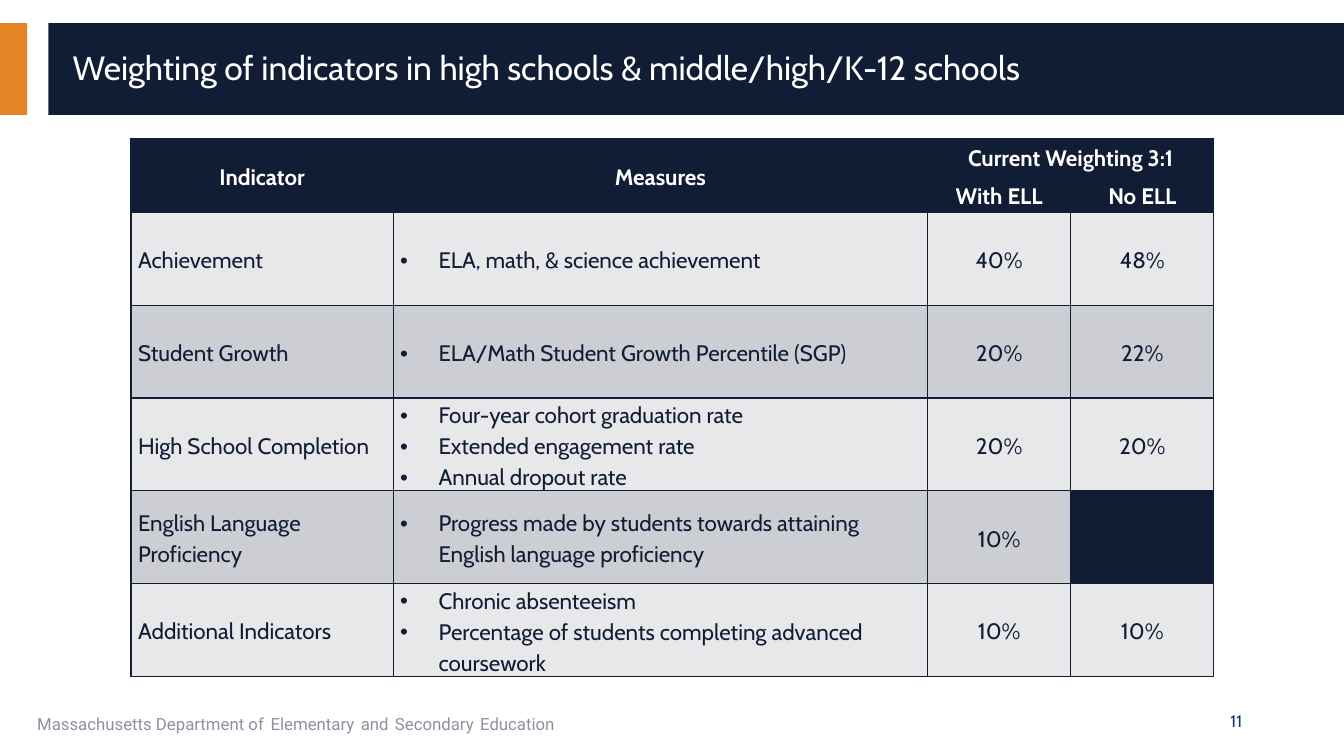
"""Build the slide on indicator weighting in high schools."""
from lxml import etree
from pptx import Presentation
from pptx import util as u
from pptx.dml.color import RGBColor
from pptx.enum import shapes, text
from pptx.oxml.ns import qn

COLOURS = {"navy": "101D35", "orange": "E38526", "white": "FFFFFF", "blue": "203B6A",
           "grey": "8D92A1", "light": "E8E8EB", "dark": "CDCED4"}
TITLE = "Weighting of indicators in high schools & middle/high/K-12 schools"
FOOTER = ["Massachusetts Department of", "Elementary", "and", "Secondary", "Education"]
PAGE_NUMBER = "11"
BARS = [(0, 0.27, "orange"), (0.48, 12.85, "navy")]
HEADERS = [["Indicator", "Measures", "Current Weighting 3:1", ""],
           ["", "", "With ELL", "No ELL"]]
INDICATORS = [
    (["Achievement"], ["ELA, math, & science achievement"], "40%", "48%"),
    (["Student Growth"], ["ELA/Math Student Growth Percentile (SGP)"], "20%", "22%"),
    (["High School Completion"],
     ["Four-year cohort graduation rate", "Extended engagement rate", "Annual dropout rate"],
     "20%", "20%"),
    (["English Language", "Proficiency"],
     ["Progress made by students towards attaining English language proficiency"], "10%", ""),
    (["Additional Indicators"],
     ["Chronic absenteeism", "Percentage of students completing advanced coursework"],
     "10%", "10%"),
]
COLUMN_WIDTHS = [2.6, 5.3, 1.42, 1.42]
ROW_HEIGHTS = [0.37] * 2 + [0.92] * len(INDICATORS)
MERGES = [(0, 0, 1, 0), (0, 1, 1, 1), (0, 2, 0, 3)]
LEFT, CENTRE, RIGHT = text.PP_ALIGN.LEFT, text.PP_ALIGN.CENTER, text.PP_ALIGN.RIGHT


def colour(name):
    return RGBColor.from_string(COLOURS[name])


def add_span(para, words, size=16, font="Cabin", ink="navy", bold=False):
    span = para.add_run()
    span.text = words
    span.font.size, span.font.name, span.font.bold = u.Pt(size), font, bold
    span.font.color.rgb = colour(ink)


def write(frame, lines, align=LEFT, spacing=1.0, bullet=False, **style):
    for index, line in enumerate(lines):
        para = frame.add_paragraph() if index else frame.paragraphs[0]
        para.alignment, para.line_spacing = align, spacing
        if bullet:
            props = para._p.get_or_add_pPr()
            props.set("marL", str(u.Inches(0.38)))
            props.set("indent", str(-u.Inches(0.38)))
            etree.SubElement(props, qn("a:buFont")).set("typeface", "Arial")
            etree.SubElement(props, qn("a:buChar")).set("char", "•")
        add_span(para, line, **style)


def add_borders(cell):
    props = cell._tc.get_or_add_tcPr()
    for index, side in enumerate(["lnL", "lnR", "lnT", "lnB"]):
        line = etree.Element(qn("a:" + side), w=str(u.Pt(1)))
        fill = etree.SubElement(line, qn("a:solidFill"))
        etree.SubElement(fill, qn("a:srgbClr")).set("val", COLOURS["navy"])
        props.insert(index, line)


def format_cell(cell, lines, fill, **style):
    cell.fill.solid()
    cell.fill.fore_color.rgb = colour(fill)
    cell.vertical_anchor = text.MSO_ANCHOR.MIDDLE
    cell.margin_left = cell.margin_right = u.Inches(0.07)
    cell.margin_top = cell.margin_bottom = 0
    add_borders(cell)
    if any(lines):
        write(cell.text_frame, lines, spacing=1.15, **style)


def add_box(page, left, top, width, height):
    box = page.shapes.add_textbox(*map(u.Inches, (left, top, width, height)))
    box.text_frame.word_wrap = True
    return box.text_frame


def add_title(page):
    for left, width, fill in BARS:
        bar = page.shapes.add_shape(shapes.MSO_SHAPE.RECTANGLE,
                                    *map(u.Inches, (left, 0.23, width, 0.91)))
        bar.fill.solid()
        bar.fill.fore_color.rgb = colour(fill)
        bar.line.fill.background()
        bar.shadow.inherit = False
    title = page.shapes.title
    title.left, title.top, title.width, title.height = map(u.Inches, (0.62, 0.32, 12.44, 0.74))
    title.text_frame.vertical_anchor = text.MSO_ANCHOR.MIDDLE
    write(title.text_frame, [TITLE], spacing=0.9, size=24, ink="white")
    page.shapes._spTree.append(title._element)


def add_footer(page):
    para = add_box(page, 0.27, 6.95, 8.44, 0.4).paragraphs[0]
    for index, words in enumerate(FOOTER):
        if index:
            add_span(para, " ", size=18, font="Roboto", ink="blue")
        add_span(para, words, size=12, font="Roboto", ink="grey")
    number = add_box(page, 9.42, 6.95, 3, 0.4)
    number.vertical_anchor = text.MSO_ANCHOR.MIDDLE
    write(number, [PAGE_NUMBER], align=RIGHT, size=12, ink="blue")


def add_weights(page):
    area = (1.3, 1.37, sum(COLUMN_WIDTHS), sum(ROW_HEIGHTS))
    table = page.shapes.add_table(len(ROW_HEIGHTS), len(COLUMN_WIDTHS),
                                  *map(u.Inches, area)).table
    for column, width in zip(table.columns, COLUMN_WIDTHS):
        column.width = u.Inches(width)
    for row, height in zip(table.rows, ROW_HEIGHTS):
        row.height = u.Inches(height)
    for top, left, bottom, right in MERGES:
        table.cell(top, left).merge(table.cell(bottom, right))
    for row, headers in enumerate(HEADERS):
        for column, header in enumerate(headers):
            format_cell(table.cell(row, column), [header], "navy",
                        align=CENTRE, ink="white", bold=True)
    for row, (names, measures, *weights) in enumerate(INDICATORS, len(HEADERS)):
        fill = "dark" if row % 2 else "light"
        format_cell(table.cell(row, 0), names, fill)
        format_cell(table.cell(row, 1), measures, fill, bullet=True)
        for column, weight in enumerate(weights, 2):
            format_cell(table.cell(row, column), [weight], fill if weight else "navy",
                        align=CENTRE)


def main():
    deck = Presentation()
    deck.slide_width, deck.slide_height = u.Inches(13.33), u.Inches(7.5)
    page = deck.slides.add_slide(deck.slide_layouts[5])
    add_title(page)
    add_footer(page)
    add_weights(page)
    deck.save("out.pptx")


if __name__ == "__main__":
    main()
